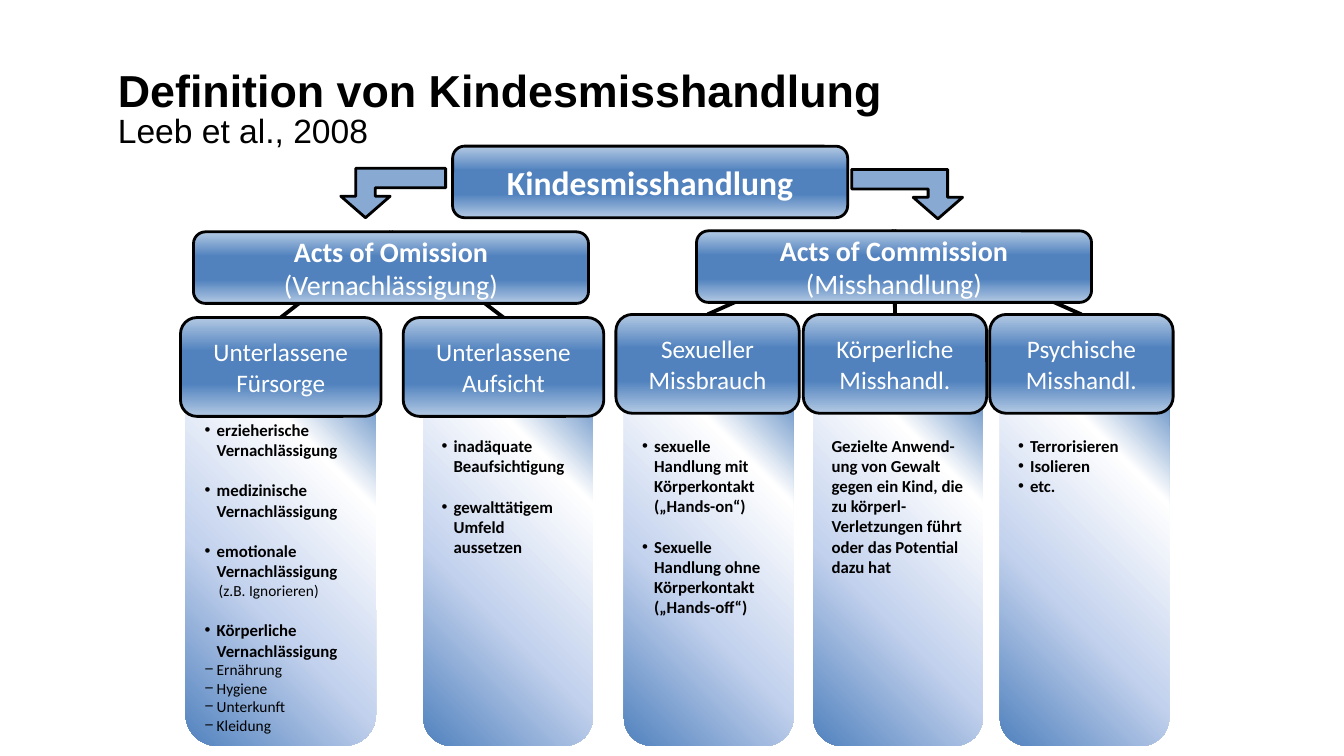
from pptx import Presentation
from pptx.dml.color import RGBColor
from pptx.enum.shapes import MSO_CONNECTOR, MSO_SHAPE
from pptx.enum.text import MSO_ANCHOR, MSO_AUTO_SIZE, PP_ALIGN
from pptx.oxml import parse_xml
from pptx.oxml.ns import nsdecls, qn
from pptx.util import Pt

ROUNDED = MSO_SHAPE.ROUNDED_RECTANGLE
BENT_ARROW = MSO_SHAPE.BENT_UP_ARROW
STRAIGHT = MSO_CONNECTOR.STRAIGHT
TOP, MIDDLE = MSO_ANCHOR.TOP, MSO_ANCHOR.MIDDLE
LEFT, CENTER = PP_ALIGN.LEFT, PP_ALIGN.CENTER
NO_FIT = MSO_AUTO_SIZE.NONE

COLORS = {"black": "000000", "white": "FFFFFF", "blue": "5182BE",
          "light": "B3C9E3", "pale": "C2D1ED", "arrow": "88A9D2"}

# Content
TITLE = [("Definition von Kindesmisshandlung", 32, True),
         ("Leeb et al., 2008", 24, False)]
ROOT = "Kindesmisshandlung"

# Each column: head, head left, column left, text inset, [(kind, text)]
OMISSION = [
    ("Unterlassene Fürsorge", 128.9, 132.5, 20.7, [
        ("bullet", "erzieherische Vernachlässigung"),
        ("bullet", "medizinische Vernachlässigung"),
        ("bullet", "emotionale Vernachlässigung"),
        ("note", "(z.B. Ignorieren)"),
        ("bullet", "Körperliche Vernachlässigung"),
        ("dash", "Ernährung"), ("dash", "Hygiene"),
        ("dash", "Unterkunft"), ("dash", "Kleidung")]),
    ("Unterlassene Aufsicht", 288, 302.4, 33, [
        ("bullet", "inadäquate Beaufsichtigung"),
        ("bullet", "gewalttätigem Umfeld aussetzen")]),
]
COMMISSION = [
    ("Sexueller Missbrauch", 439.9, 445.7, 33, [
        ("bullet", "sexuelle Handlung mit Körperkontakt („Hands-on“)"),
        ("bullet", "Sexuelle Handlung ohne Körperkontakt („Hands-off“)")]),
    ("Körperliche Misshandl.", 573.8, 581, 33, [
        ("plain", "Gezielte Anwend-ung von Gewalt gegen ein Kind, die "
                  "zu körperl- Verletzungen führt oder das Potential dazu hat")]),
    ("Psychische Misshandl.", 707, 714.2, 33, [
        ("tight", "Terrorisieren"), ("tight", "Isolieren"), ("tight", "etc.")]),
]
# Each act: name, translation, left, top, head top, head width, columns
ACTS = [
    ("Acts of Omission", "(Vernachlässigung)", 138.2, 165.6, 226.8, 143.3, OMISSION),
    ("Acts of Commission", "(Misshandlung)", 497.5, 164.9, 224.6, 131, COMMISSION),
]
ARROWS = [(243.4, 120.2, 74.9, False), (608.4, 121, 79.2, True)]

# kind: bullet character, left margin, hanging, size, bold, space before
KINDS = {"bullet": ("•", 8.6, 8.6, 12, True, 14.6),
         "tight": ("•", 8.6, 8.6, 12, True, 0),
         "dash": ("−", 8.6, 8.6, 11, False, 0),
         "note": (None, 10, 0, 11, False, 0),
         "plain": (None, 0, 0, 12, True, 0)}

ACT_WIDTH, ACT_HEIGHT, HEAD_HEIGHT = 282.2, 51.1, 70.6
COLUMN_TOP, COLUMN_HEIGHT = 272.2, 260.6
WIDE_COLUMN, COLUMN_WIDTH = 136.1, 121
BOX_GRADIENT = ([(0, "light"), (34, "blue"), (67, "blue"), (100, "light")],
                '<a:lin ang="5400000" scaled="0"/>')
COLUMN_GRADIENT = ([(0, "blue"), (38, "pale"), (77, "white"), (100, "blue")],
                   '<a:path path="circle"><a:fillToRect t="100000" r="100000"/></a:path>')


def color(name):
    return RGBColor.from_string(COLORS[name])


def style(para, size, bold, name="white", face="Calibri"):
    for span in para.runs:
        span.font.size, span.font.bold, span.font.name = Pt(size), bold, face
        span.font.color.rgb = color(name)


def add_shape(kind, left, top, width, height, gradient=None, outlined=True):
    shape = slide.shapes.add_shape(kind, Pt(left), Pt(top), Pt(width), Pt(height))
    shape.shadow.inherit = False
    if gradient:
        stops, direction = gradient
        marks = "".join(f'<a:gs pos="{at * 1000}"><a:srgbClr val="{COLORS[name]}"/></a:gs>'
                        for at, name in stops)
        shape._element.spPr.find(qn("a:prstGeom")).addnext(parse_xml(
            f'<a:gradFill {nsdecls("a")} rotWithShape="1"><a:gsLst>{marks}</a:gsLst>'
            f'{direction}</a:gradFill>'))
    if outlined:
        shape.line.color.rgb = color("black")
        shape.line.width = Pt(2)
    else:
        shape.line.fill.background()
    return shape


def add_box(left, top, width, height, lines):
    frame = add_shape(ROUNDED, left, top, width, height, BOX_GRADIENT).text_frame
    frame.word_wrap, frame.vertical_anchor = True, MIDDLE
    frame.text = "\n".join(text for text, size, bold in lines)
    for para, (text, size, bold) in zip(frame.paragraphs, lines):
        para.alignment = CENTER
        style(para, size, bold)


def add_column(left, width, inset, items):
    box = add_shape(ROUNDED, left, COLUMN_TOP, width, COLUMN_HEIGHT, COLUMN_GRADIENT, False)
    frame = box.text_frame
    frame.word_wrap, frame.vertical_anchor = True, TOP
    frame.margin_top = Pt(inset)
    frame.text = "\n".join(text for kind, text in items)
    for index, (para, (kind, text)) in enumerate(zip(frame.paragraphs, items)):
        mark, margin, hanging, size, bold, gap = KINDS[kind]
        para.alignment = LEFT
        if index:
            para.space_before = Pt(gap)
        properties = para._p.get_or_add_pPr()
        properties.set("marL", str(Pt(margin)))
        properties.set("indent", str(-Pt(hanging)))
        if mark:
            properties.append(parse_xml(f'<a:buFont {nsdecls("a")} typeface="Arial"/>'))
            properties.append(parse_xml(f'<a:buChar {nsdecls("a")} char="{mark}"/>'))
        style(para, size, bold, "black")


def add_link(x1, y1, x2, y2):
    link = slide.shapes.add_connector(STRAIGHT, Pt(x1), Pt(y1), Pt(x2), Pt(y2))
    link.line.color.rgb = color("black")
    link.line.width = Pt(2.75)
    link._element.spPr.append(parse_xml(f'<a:effectLst {nsdecls("a")}/>'))


deck = Presentation()
deck.slide_width, deck.slide_height = Pt(960), Pt(540)
slide = deck.slides.add_slide(deck.slide_layouts[5])

# Title with its source line
title = slide.shapes.title
title.left, title.top, title.width, title.height = Pt(84.2), Pt(50.4), Pt(765.4), Pt(65.5)
frame = title.text_frame
frame.auto_size, frame.word_wrap, frame.vertical_anchor = NO_FIT, True, TOP
frame.margin_left = frame.margin_top = frame.margin_right = frame.margin_bottom = 0
frame.text = "\n".join(text for text, size, bold in TITLE)
for para, (text, size, bold) in zip(frame.paragraphs, TITLE):
    para.alignment, para.line_spacing, para.space_before = LEFT, 0.85, Pt(0)
    style(para, size, bold, "black", "Arial")

# Links from each act to its heads, and the columns beneath
for name, translation, left, top, head_top, head_width, columns in ACTS:
    for head, head_left, column_left, inset, items in columns:
        add_link(head_left + head_width / 2, head_top, left + ACT_WIDTH / 2, top)
        width = WIDE_COLUMN if len(items) > 3 else COLUMN_WIDTH
        add_column(column_left, width, inset, items)

# Boxes of the tree
add_box(323.3, 104.4, ACT_WIDTH, ACT_HEIGHT, [(ROOT, 24, True)])
for name, translation, left, top, head_top, head_width, columns in ACTS:
    add_box(left, top, ACT_WIDTH, ACT_HEIGHT, [(name, 20, True), (translation, 20, False)])
    for head, head_left, column_left, inset, items in columns:
        add_box(head_left, head_top, head_width, HEAD_HEIGHT, [(head, 18, False)])

# Arrows from the root to the two acts
for left, top, width, flipped in ARROWS:
    arrow = add_shape(BENT_ARROW, left, top, width, 35.3)
    arrow.fill.solid()
    arrow.fill.fore_color.rgb = color("arrow")
    arrow.rotation = 180
    for index, value in enumerate((0.395, 0.5, 0.436)):
        arrow.adjustments[index] = value
    if flipped:
        arrow._element.spPr.xfrm.set("flipH", "1")

deck.save("out.pptx")
